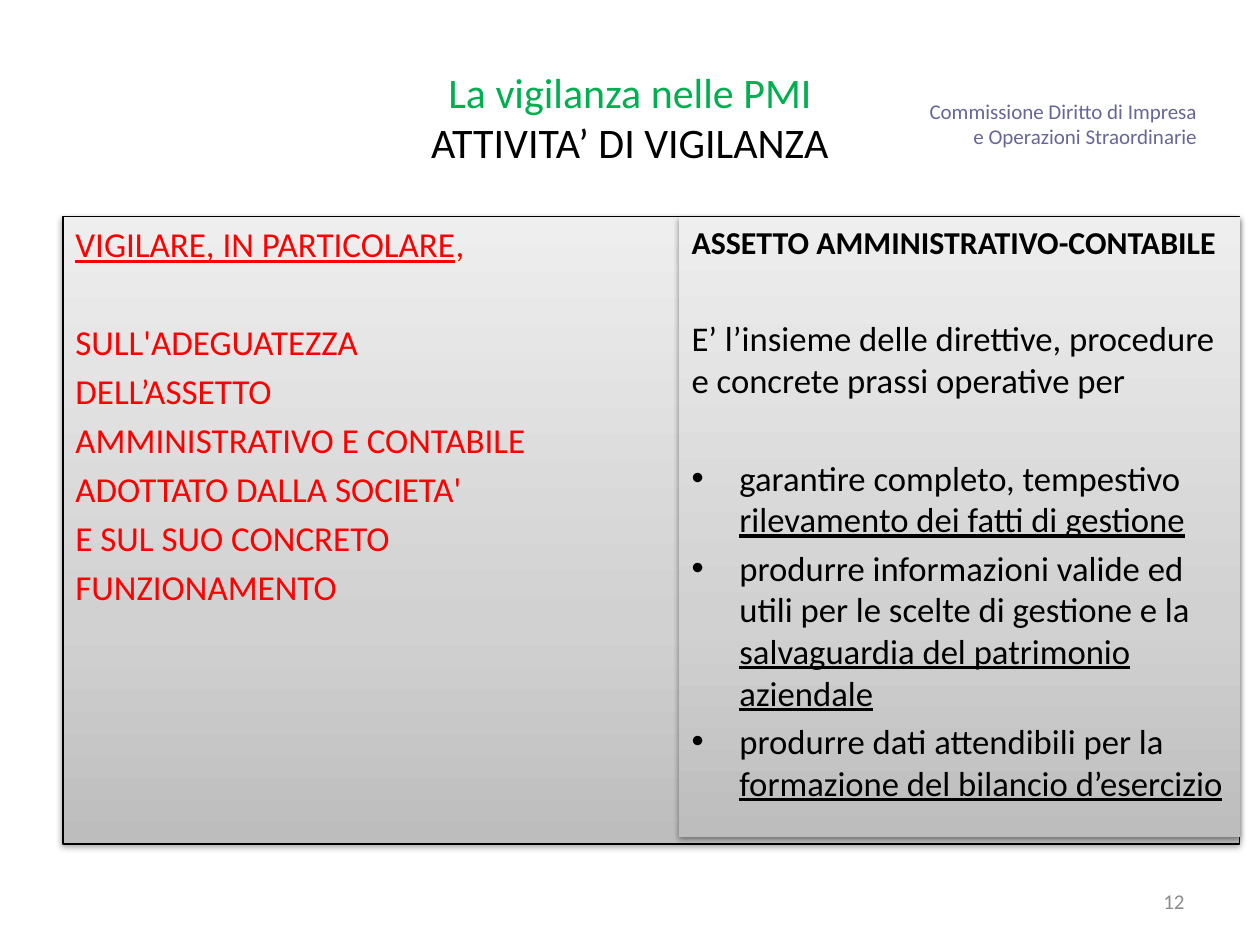
from pptx import Presentation
from pptx.dml.color import RGBColor
from pptx.enum.shapes import MSO_SHAPE
from pptx.enum.text import MSO_ANCHOR, PP_ALIGN
from pptx.oxml import parse_xml
from pptx.oxml.ns import nsdecls, qn
from pptx.util import Inches, Pt

RECT = MSO_SHAPE.RECTANGLE
TOP, MIDDLE, BOTTOM = MSO_ANCHOR.TOP, MSO_ANCHOR.MIDDLE, MSO_ANCHOR.BOTTOM
LEFT, CENTER, RIGHT = PP_ALIGN.LEFT, PP_ALIGN.CENTER, PP_ALIGN.RIGHT

BLACK = RGBColor(0x00, 0x00, 0x00)
GREEN = RGBColor(0x00, 0xB0, 0x50)
RED = RGBColor(0xFF, 0x00, 0x00)
VIOLET = RGBColor(0x66, 0x66, 0x99)
GRAY = RGBColor(0x8C, 0x8C, 0x8C)
SHADES = [
    (0, RGBColor(0xBD, 0xBD, 0xBD)),
    (35, RGBColor(0xD1, 0xD1, 0xD1)),
    (100, RGBColor(0xEE, 0xEE, 0xEE)),
]

FONT = "Calibri"
WIDTH, HEIGHT = Inches(10), Inches(7.5)
HANG = Inches(0.38)
NEAR, FAR = 4, 32

DUTIES = [
    "SULL'ADEGUATEZZA",
    "DELL’ASSETTO",
    "AMMINISTRATIVO E CONTABILE",
    "ADOTTATO DALLA SOCIETA'",
    "E SUL SUO CONCRETO",
    "FUNZIONAMENTO",
]
GOALS = [
    ("garantire completo, tempestivo ", "rilevamento dei fatti di gestione"),
    ("produrre informazioni valide ed utili per le scelte di gestione e la ",
     "salvaguardia del patrimonio aziendale"),
    ("produrre dati attendibili per la ", "formazione del bilancio d’esercizio"),
]


def area(left, top, width, height):
    """Turn percentages of the slide into lengths."""
    return (int(WIDTH * left / 100), int(HEIGHT * top / 100),
            int(WIDTH * width / 100), int(HEIGHT * height / 100))


def add_run(para, text, size, color, bold=False, under=False):
    """Add one formatted run to a paragraph."""
    run = para.add_run()
    run.text = text
    font = run.font
    font.name, font.size, font.bold, font.underline = FONT, Pt(size), bold, under
    font.color.rgb = color


def add_para(frame, align=LEFT, gap=0):
    """Return the empty first paragraph of a frame or a new one below."""
    first = frame.paragraphs[0]
    para = frame.add_paragraph() if first.runs else first
    para.alignment = align
    para.space_before = Pt(gap)
    return para


def add_bullet(para):
    """Give a paragraph a hanging bullet."""
    props = para._p.get_or_add_pPr()
    props.set("marL", str(HANG))
    props.set("indent", str(-HANG))
    props.append(parse_xml(f'<a:buFont {nsdecls("a")} typeface="Arial"/>'))
    props.append(parse_xml(f'<a:buChar {nsdecls("a")} char="•"/>'))


def add_text(slide, box, lines, color, anchor, inset):
    """Place right-aligned small text in a box."""
    frame = slide.shapes.add_textbox(*box).text_frame
    frame.word_wrap = True
    frame.vertical_anchor = anchor
    frame.margin_left = frame.margin_right = Inches(inset)
    frame.margin_top = frame.margin_bottom = Inches(inset / 2)
    for line in lines:
        add_run(add_para(frame, RIGHT), line, 12, color)


def add_title(slide, box):
    """Place the two-line title."""
    title = slide.shapes.title
    title.left, title.top, title.width, title.height = box
    frame = title.text_frame
    frame.vertical_anchor = MIDDLE
    para = add_para(frame, CENTER)
    add_run(para, "La vigilanza nelle PMI", 24, GREEN)
    para.add_line_break()
    add_run(para, "ATTIVITA’ DI VIGILANZA", 24, BLACK)


def add_panel(slide, box, edge):
    """Place a shaded panel with a shadow and return its text frame."""
    panel = slide.shapes.add_shape(RECT, *box)
    panel.fill.gradient()
    stops = "".join(
        f'<a:gs pos="{pos * 1000}"><a:srgbClr val="{shade}"/></a:gs>'
        for pos, shade in SHADES)
    props = panel._element.spPr
    props.replace(props.find(qn("a:gradFill")), parse_xml(
        f'<a:gradFill {nsdecls("a")} rotWithShape="1"><a:gsLst>{stops}</a:gsLst>'
        '<a:lin ang="16200000" scaled="1"/></a:gradFill>'))
    if edge:
        panel.line.color.rgb = BLACK
        panel.line.width = Pt(0.75)
    else:
        panel.line.fill.background()
    panel.shadow.inherit = False
    props.find(qn("a:effectLst")).append(parse_xml(
        f'<a:outerShdw {nsdecls("a")} blurRad="{Pt(3.1)}" dist="{Pt(1.6)}" '
        'dir="5400000" rotWithShape="0"><a:srgbClr val="000000">'
        '<a:alpha val="38000"/></a:srgbClr></a:outerShdw>'))
    frame = panel.text_frame
    frame.word_wrap = True
    frame.vertical_anchor = TOP
    return frame


def add_duties(slide, box):
    """Place the wide panel with the duties."""
    frame = add_panel(slide, box, True)
    para = add_para(frame)
    add_run(para, "VIGILARE, IN PARTICOLARE", 20, RED, under=True)
    add_run(para, ",", 20, RED)
    for row, duty in enumerate(DUTIES):
        add_run(add_para(frame, gap=NEAR if row else FAR), duty, 20, RED)


def add_goals(slide, box):
    """Place the right panel with the definition and its goals."""
    frame = add_panel(slide, box, False)
    add_run(add_para(frame), "ASSETTO AMMINISTRATIVO-CONTABILE", 18.2, BLACK, bold=True)
    add_run(add_para(frame, gap=FAR),
            "E’ l’insieme delle direttive, procedure e concrete prassi operative per",
            19.8, BLACK)
    for row, (lead, key) in enumerate(GOALS):
        para = add_para(frame, gap=NEAR if row else FAR)
        add_bullet(para)
        add_run(para, lead, 19.8, BLACK)
        add_run(para, key, 19.8, BLACK, under=True)


def main():
    """Build and save the slide."""
    deck = Presentation()
    deck.slide_width, deck.slide_height = WIDTH, HEIGHT
    slide = deck.slides.add_slide(deck.slide_layouts[5])
    add_text(slide, area(64.3, 10, 30.7, 5.73),
             ["Commissione Diritto di Impresa", "e Operazioni Straordinarie"],
             VIOLET, BOTTOM, 0)
    add_title(slide, area(5, 4, 90, 16.67))
    add_duties(slide, area(5, 22.93, 93.4, 66.4))
    add_text(slide, area(71.7, 92.67, 23.3, 5.33), ["12"], GRAY, MIDDLE, 0.1)
    add_goals(slide, area(53.9, 22.93, 44.5, 65.6))
    deck.save("out.pptx")


if __name__ == "__main__":
    main()
